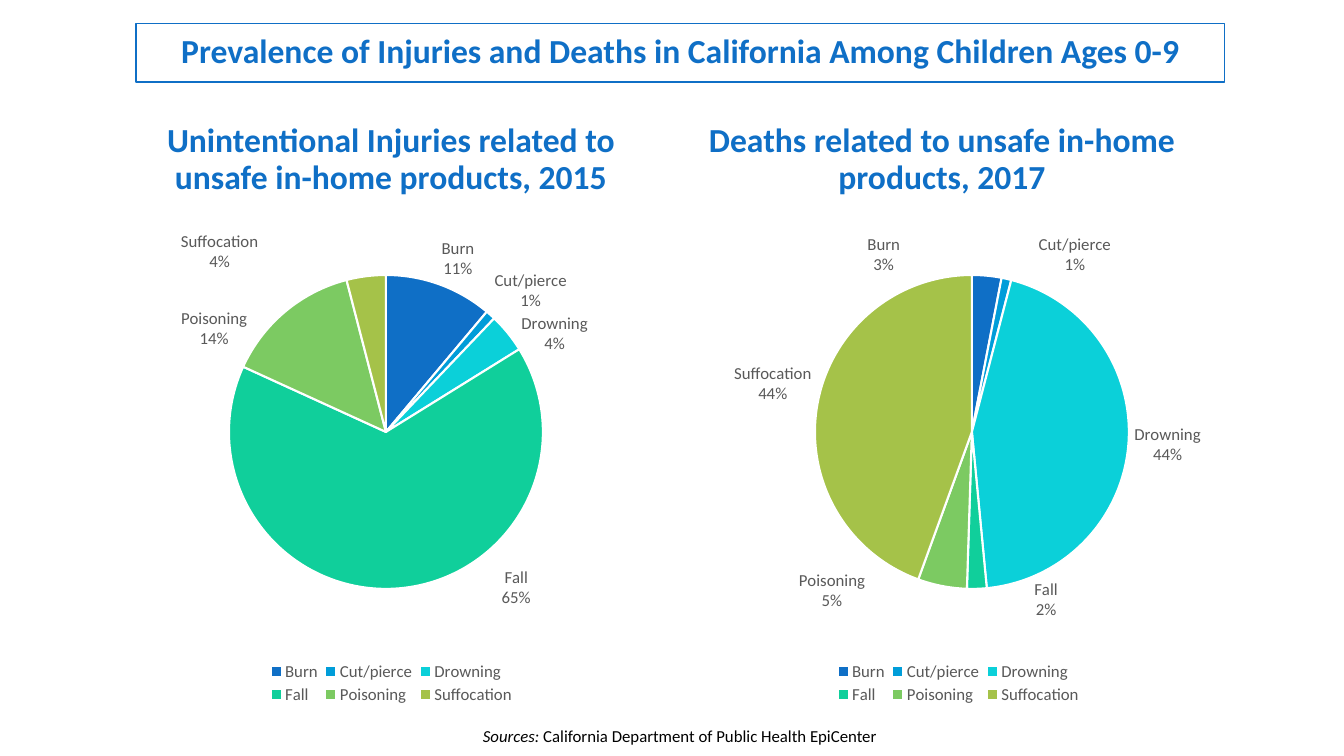
from copy import deepcopy
from dataclasses import dataclass

from lxml import etree
from pptx import Presentation
from pptx.chart.data import CategoryChartData
from pptx.dml.color import RGBColor
from pptx.enum.chart import XL_CHART_TYPE, XL_LABEL_POSITION, XL_LEGEND_POSITION
from pptx.enum.text import MSO_ANCHOR, MSO_AUTO_SIZE, PP_ALIGN
from pptx.oxml import parse_xml
from pptx.oxml.ns import qn
from pptx.util import Emu, Pt

PIE = XL_CHART_TYPE.PIE
BOTTOM = XL_LEGEND_POSITION.BOTTOM
OUTSIDE_END = XL_LABEL_POSITION.OUTSIDE_END
MIDDLE = MSO_ANCHOR.MIDDLE
NO_FIT = MSO_AUTO_SIZE.NONE
CENTER = PP_ALIGN.CENTER

FONT = "Calibri"
BLUE = RGBColor(0x0F, 0x6F, 0xC6)
GRAY = RGBColor(0x59, 0x59, 0x59)
BLACK = RGBColor(0, 0, 0)
WHITE = RGBColor(0xFF, 0xFF, 0xFF)
CAUSES = {
    "Burn": BLUE,
    "Cut/pierce": RGBColor(0x00, 0x9D, 0xD9),
    "Drowning": RGBColor(0x0B, 0xD0, 0xD9),
    "Fall": RGBColor(0x10, 0xCF, 0x9B),
    "Poisoning": RGBColor(0x7C, 0xCA, 0x62),
    "Suffocation": RGBColor(0xA5, 0xC2, 0x49),
}
PX_PER_INCH = 100.8
CHART_NS = "http://schemas.openxmlformats.org/drawingml/2006/chart"


@dataclass
class Box:
    left: int
    top: int
    width: int
    height: int

    def emu(self) -> tuple[Emu, ...]:
        return tuple(px(n) for n in (self.left, self.top, self.width, self.height))


@dataclass
class Panel:
    heading: str
    heading_box: Box
    chart_box: Box
    pie_box: Box
    legend_box: Box
    shares: tuple[int, ...]
    label_shifts: dict[int, tuple[int, int]]


PANELS = [
    Panel("Unintentional Injuries related to unsafe in-home products, 2015",
          Box(129, 117, 524, 86), Box(129, 216, 524, 493),
          Box(229, 275, 314, 314), Box(263, 659, 257, 48),
          (11, 1, 4, 65, 14, 4),
          {2: (9, 24), 3: (120, -27), 4: (-34, 42), 5: (-107, 1)}),
    Panel("Deaths related to unsafe in-home products, 2017",
          Box(680, 117, 524, 86), Box(672, 216, 574, 493),
          Box(815, 275, 314, 314), Box(830, 659, 257, 48),
          (3, 1, 44, 2, 5, 44),
          {0: (-120, 5), 1: (31, 2), 3: (69, -15), 4: (-76, -21)}),
]


def px(n: int) -> Emu:
    return Emu(round(n * 914400 / PX_PER_INCH))


def style_font(font, size: int, color: RGBColor, bold: bool = False) -> None:
    font.name, font.size, font.bold = FONT, Pt(size), bold
    font.color.rgb = color


def write_heading(sp, text: str, box: Box) -> None:
    sp.left, sp.top, sp.width, sp.height = box.emu()
    tf = sp.text_frame
    tf.text = text
    tf.word_wrap, tf.auto_size, tf.vertical_anchor = True, NO_FIT, MIDDLE
    p = tf.paragraphs[0]
    p.alignment, p.line_spacing = CENTER, 0.9
    style_font(p.runs[0].font, 24, BLUE, bold=True)


def layout_xml(**settings):
    """Manual chart layout; settings are in schema order."""
    items = "".join(f'<c:{k} val="{v}"/>' for k, v in settings.items())
    return parse_xml(f'<c:layout xmlns:c="{CHART_NS}"><c:manualLayout>{items}'
                     "</c:manualLayout></c:layout>")


def place_part(part, index: int, box: Box, frame: Box, **target) -> None:
    """Fix the plot area or legend at a box inside the chart frame."""
    for old in part.findall(qn("c:layout")):
        part.remove(old)
    part.insert(index, layout_xml(
        **target, xMode="edge", yMode="edge",
        x=round((box.left - frame.left) / frame.width, 4),
        y=round((box.top - frame.top) / frame.height, 4),
        w=round(box.width / frame.width, 4),
        h=round(box.height / frame.height, 4)))


def label_slices(chart, panel: Panel) -> None:
    labels = chart.plots[0].series[0].data_labels
    labels.show_category_name = labels.show_value = True
    labels.number_format, labels.number_format_is_linked = '0"%"', False
    labels.position = OUTSIDE_END
    style_font(labels.font, 12, GRAY)

    group = chart.element.find(".//" + qn("c:ser")).find(qn("c:dLbls"))
    for old in group.findall(qn("c:showLeaderLines")):
        group.remove(old)
    etree.SubElement(group, qn("c:separator")).text = "\n"
    shared = list(group)
    for order, (idx, (dx, dy)) in enumerate(panel.label_shifts.items()):
        label = etree.Element(qn("c:dLbl"))
        etree.SubElement(label, qn("c:idx")).set("val", str(idx))
        label.append(layout_xml(x=round(dx / panel.chart_box.width, 4),
                                y=round(dy / panel.chart_box.height, 4)))
        label.extend(deepcopy(child) for child in shared)
        group.insert(order, label)
    etree.SubElement(group, qn("c:showLeaderLines")).set("val", "0")


def add_pie(s, panel: Panel) -> None:
    data = CategoryChartData()
    data.categories = list(CAUSES)
    data.add_series("Series 1", panel.shares)
    chart = s.shapes.add_chart(PIE, *panel.chart_box.emu(), data).chart
    style_font(chart.font, 10, BLACK)
    chart.has_title = False
    chart.plots[0].vary_by_categories = True
    for i, color in enumerate(CAUSES.values()):
        fmt = chart.plots[0].series[0].points[i].format
        fmt.fill.solid()
        fmt.fill.fore_color.rgb = color
        fmt.line.color.rgb = WHITE
        fmt.line.width = Pt(1.5)
    label_slices(chart, panel)

    chart.has_legend = True
    legend = chart.legend
    legend.position, legend.include_in_layout = BOTTOM, False
    style_font(legend.font, 12, GRAY)
    place_part(chart.element.find(".//" + qn("c:plotArea")), 0,
               panel.pie_box, panel.chart_box, layoutTarget="inner")
    place_part(chart.element.find(".//" + qn("c:legend")), 1,
               panel.legend_box, panel.chart_box)


def add_sources(s) -> None:
    tf = s.shapes.add_textbox(*Box(122, 721, 1116, 72).emu()).text_frame
    tf.word_wrap = True
    p = tf.paragraphs[0]
    p.alignment = CENTER
    for text, italic in (("Sources: ", True),
                         ("California Department of Public Health EpiCenter", False)):
        r = p.add_run()
        r.text = text
        style_font(r.font, 12, BLACK)
        r.font.italic = italic


def main() -> None:
    prs = Presentation()
    prs.slide_width, prs.slide_height = px(1344), px(756)
    s = prs.slides.add_slide(prs.slide_layouts[5])
    title = s.shapes.title
    write_heading(title, "Prevalence of Injuries and Deaths in California "
                  "Among Children Ages 0-9", Box(136, 23, 1089, 59))
    title.line.color.rgb = BLUE
    title.line.width = Pt(0.75)
    for panel in PANELS:
        write_heading(s.shapes.add_textbox(0, 0, 0, 0), panel.heading, panel.heading_box)
        add_pie(s, panel)
    add_sources(s)
    prs.save("out.pptx")


if __name__ == "__main__":
    main()
